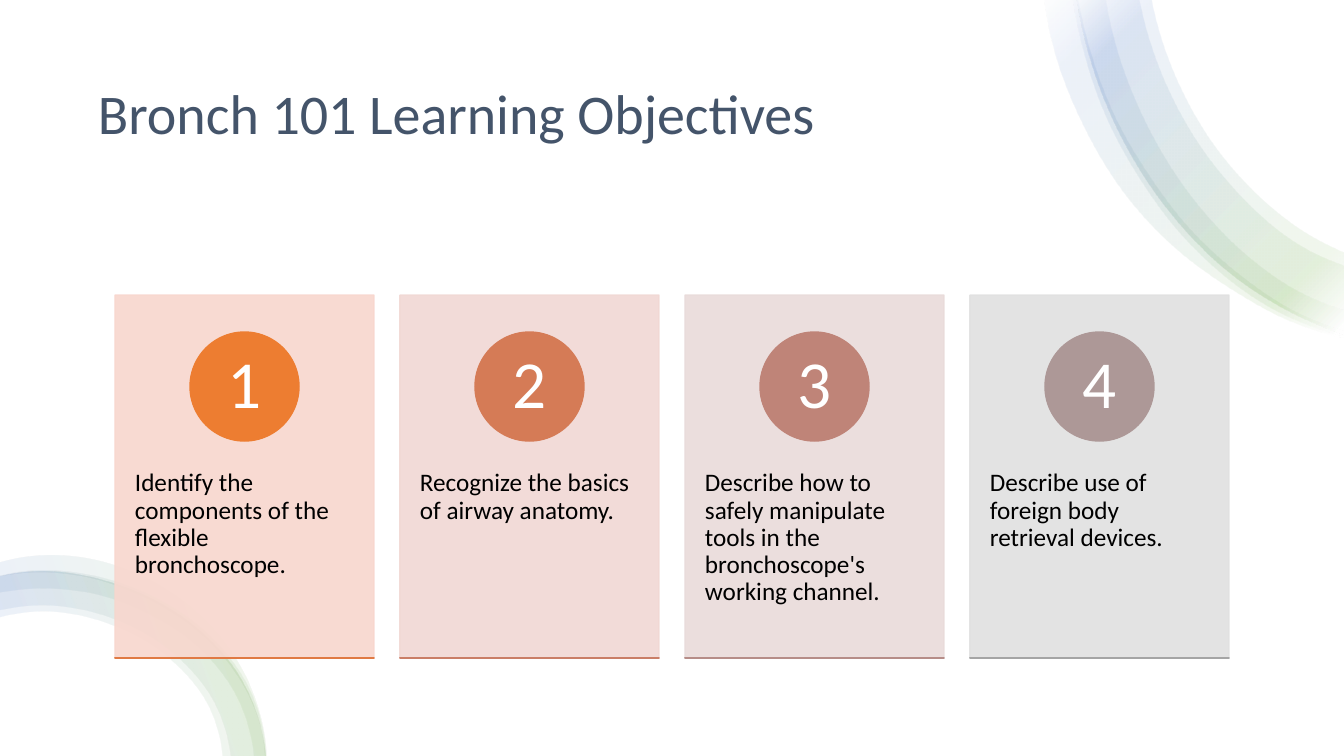
from math import dist

from lxml import etree
from pptx import Presentation
from pptx.dml.color import RGBColor
from pptx.enum.shapes import MSO_SHAPE
from pptx.enum.text import MSO_ANCHOR, PP_ALIGN
from pptx.oxml.ns import qn
from pptx.util import Pt

EMU_PER_PX = 12192000 / 1344
SLIDE_WIDTH, SLIDE_HEIGHT = 1344, 756
RECTANGLE, OVAL = MSO_SHAPE.RECTANGLE, MSO_SHAPE.OVAL
TOP, MIDDLE = MSO_ANCHOR.TOP, MSO_ANCHOR.MIDDLE
LEFT, CENTER = PP_ALIGN.LEFT, PP_ALIGN.CENTER

FONT = "Calibri"
WHITE = RGBColor(0xFF, 0xFF, 0xFF)
BLACK = RGBColor(0x00, 0x00, 0x00)
SLATE = RGBColor(0x44, 0x54, 0x6A)
GREEN = RGBColor(0x70, 0xAD, 0x47)
BLUE = RGBColor(0x44, 0x72, 0xC4)
SWOOSH_STOPS = [(2, WHITE), (16, GREEN), (85, BLUE), (100, WHITE)]
SWOOSH_OPACITY = 10
CARD_OPACITY = 90

# Objective, card colour, circle colour, base line colour
OBJECTIVES = [
    ("Identify the components of the flexible bronchoscope.",
     RGBColor(0xF8, 0xD7, 0xCE), RGBColor(0xED, 0x7D, 0x31), RGBColor(0xE0, 0x7A, 0x44)),
    ("Recognize the basics of airway anatomy.",
     RGBColor(0xF1, 0xD8, 0xD4), RGBColor(0xD5, 0x7B, 0x56), RGBColor(0xCA, 0x7E, 0x67)),
    ("Describe how to safely manipulate tools in the bronchoscope's working channel.",
     RGBColor(0xE9, 0xDB, 0xDA), RGBColor(0xBF, 0x84, 0x78), RGBColor(0xB6, 0x8D, 0x88)),
    ("Describe use of foreign body retrieval devices.",
     RGBColor(0xE1, 0xE1, 0xE1), RGBColor(0xAD, 0x98, 0x97), RGBColor(0xA5, 0xA5, 0xA5)),
]
CARD_LEFT, CARD_TOP, CARD_STEP = 115, 295, 285
CARD_WIDTH, CARD_HEIGHT = 259, 363
CIRCLE_SIZE, NUMBER_SIZE = 109, 77

# Each band is an outer edge and an inner edge, as points on smooth curves
CORNER_OUTER = [(1344, 335), (1233, 276), (1161, 201), (1108, 108), (1076, -9)]
CORNER_BANDS = [
    ([(1344, 338), (1292, 322), (1231, 289), (1174, 247), (1125, 194),
      (1087, 132), (1049, 26), (1044, -9)],
     [(1077, -9), (1091, 52), (1115, 116), (1149, 175), (1190, 229),
      (1240, 275), (1296, 312), (1344, 331)]),
    (CORNER_OUTER, [(1150, -9), (1167, 55), (1229, 165), (1317, 240), (1344, 253)]),
    ([(1344, 336), (1289, 317), (1182, 235), (1141, 180), (1108, 120),
      (1077, 20), (1072, -9)],
     [(1105, -9), (1116, 44), (1138, 105), (1205, 213), (1249, 257),
      (1300, 292), (1344, 310)]),
    (CORNER_OUTER, [(1138, -9), (1156, 59), (1220, 173), (1311, 252), (1344, 266)]),
]
LOWER_OUTER = [(265, 756), (238, 675), (187, 621), (117, 585), (40, 572), (0, 577)]
LOWER_BANDS = [
    (LOWER_OUTER,
     [(0, 618), (40, 612), (108, 624), (167, 657), (208, 706), (222, 756)]),
    (LOWER_OUTER,
     [(0, 611), (40, 606), (110, 618), (171, 652), (214, 703), (230, 756)]),
    ([(265, 756), (249, 690), (205, 632), (143, 592), (70, 572), (31, 571), (0, 576)],
     [(0, 593), (33, 589), (68, 590), (102, 596), (135, 608), (194, 644),
      (236, 697), (253, 756)]),
    ([(266, 756), (252, 692), (212, 628), (149, 580), (72, 557), (31, 557), (0, 563)],
     [(0, 577), (32, 573), (70, 575), (106, 583), (140, 596), (202, 636),
      (238, 678), (260, 728), (264, 756)]),
]


def px(length):
    return round(length * EMU_PER_PX)


def set_opacity(color_element, percent):
    etree.SubElement(color_element, qn("a:alpha")).set("val", str(percent * 1000))


def curve_controls(points):
    """Return the two Bezier control points of each step of a smooth curve."""
    lengths = [dist(a, b) for a, b in zip(points, points[1:])]
    slopes = [((b[0] - a[0]) / h, (b[1] - a[1]) / h)
              for a, b, h in zip(points, points[1:], lengths)]
    tangents = [tuple((s * h1 + t * h0) / (h0 + h1) for s, t in zip(s0, s1))
                for s0, s1, h0, h1 in zip(slopes, slopes[1:], lengths, lengths[1:])]
    first = tuple(2 * s - t for s, t in zip(slopes[0], tangents[0]))
    last = tuple(2 * s - t for s, t in zip(slopes[-1], tangents[-1]))
    tangents = [first, *tangents, last]
    return [((a[0] + m[0] * h / 3, a[1] + m[1] * h / 3),
             (b[0] - n[0] * h / 3, b[1] - n[1] * h / 3))
            for a, b, m, n, h in zip(points, points[1:], tangents, tangents[1:], lengths)]


def bend_lines(shape, outer, inner):
    """Turn the straight steps along both edges into Bezier curves."""
    steps = curve_controls(outer) + [None] + curve_controls(inner)
    lines = list(shape._element.iter(qn("a:lnTo")))
    for line, controls in zip(lines, steps):
        if controls is None:
            continue
        line.tag = qn("a:cubicBezTo")
        for index, (x, y) in enumerate(controls):
            point = etree.Element(qn("a:pt"), x=str(px(x) - shape.left), y=str(px(y) - shape.top))
            line.insert(index, point)


def fill_gradient(shape, angle):
    """Fill with the see-through swoosh gradient, at a clockwise angle."""
    shape.fill.background()
    no_fill = shape._element.spPr.find(qn("a:noFill"))
    gradient = etree.Element(qn("a:gradFill"))
    stops = etree.SubElement(gradient, qn("a:gsLst"))
    for position, color in SWOOSH_STOPS:
        stop = etree.SubElement(stops, qn("a:gs"), pos=str(position * 1000))
        color_element = etree.SubElement(stop, qn("a:srgbClr"), val=str(color))
        set_opacity(color_element, SWOOSH_OPACITY)
    etree.SubElement(gradient, qn("a:lin"), ang=str(angle * 60000), scaled="0")
    no_fill.getparent().replace(no_fill, gradient)


def add_swoosh(slide, bands, angle):
    for outer, inner in bands:
        outline = [(px(x), px(y)) for x, y in outer + inner]
        builder = slide.shapes.build_freeform(*outline[0])
        builder.add_line_segments(outline[1:], close=True)
        shape = builder.convert_to_shape()
        shape.shadow.inherit = False
        shape.line.fill.background()
        bend_lines(shape, outer, inner)
        fill_gradient(shape, angle)


def add_shape(slide, kind, left, top, width, height, fill=None, line=None):
    shape = slide.shapes.add_shape(kind, px(left), px(top), px(width), px(height))
    shape.shadow.inherit = False
    if fill is None:
        shape.fill.background()
    else:
        shape.fill.solid()
        shape.fill.fore_color.rgb = fill
    if line is None:
        shape.line.fill.background()
    else:
        shape.line.color.rgb = line
        shape.line.width = Pt(1)
    return shape


def add_text(slide, left, top, width, height, text, size, color,
             alignment=LEFT, anchor=MIDDLE, insets=(10, 5)):
    frame = add_shape(slide, RECTANGLE, left, top, width, height).text_frame
    frame.word_wrap = True
    frame.vertical_anchor = anchor
    frame.margin_left = frame.margin_right = px(insets[0])
    frame.margin_top = frame.margin_bottom = px(insets[1])
    paragraph = frame.paragraphs[0]
    paragraph.text = text
    paragraph.alignment = alignment
    paragraph.line_spacing = 0.9
    paragraph.font.name = FONT
    paragraph.font.size = Pt(size)
    paragraph.font.color.rgb = color


def add_objective_card(slide, number, objective, card_color, circle_color, line_color):
    left = CARD_LEFT + (number - 1) * CARD_STEP
    card = add_shape(slide, RECTANGLE, left, CARD_TOP, CARD_WIDTH, CARD_HEIGHT,
                     card_color, card_color)
    for color_element in card._element.spPr.iter(qn("a:srgbClr")):
        set_opacity(color_element, CARD_OPACITY)
    add_text(slide, left, CARD_TOP + 139, CARD_WIDTH, 218, objective, 18, BLACK,
             anchor=TOP, insets=(20, 36))
    add_shape(slide, OVAL, left + (CARD_WIDTH - CIRCLE_SIZE) // 2, CARD_TOP + 37,
              CIRCLE_SIZE, CIRCLE_SIZE, circle_color, circle_color)
    add_text(slide, left + (CARD_WIDTH - NUMBER_SIZE) // 2, CARD_TOP + 53,
             NUMBER_SIZE, NUMBER_SIZE, str(number), 48, WHITE,
             alignment=CENTER, insets=(8, 1))
    add_shape(slide, RECTANGLE, left, CARD_TOP + CARD_HEIGHT, CARD_WIDTH, 0,
              line_color, line_color)


def main():
    presentation = Presentation()
    presentation.slide_width, presentation.slide_height = px(SLIDE_WIDTH), px(SLIDE_HEIGHT)
    slide = presentation.slides.add_slide(presentation.slide_layouts[6])
    add_shape(slide, RECTANGLE, 0, 0, SLIDE_WIDTH, SLIDE_HEIGHT, WHITE)
    add_text(slide, 88, 51, 1166, 131, "Bronch 101 Learning Objectives", 40, SLATE)
    add_swoosh(slide, CORNER_BANDS, 225)
    add_swoosh(slide, LOWER_BANDS, 160)
    for number, objective in enumerate(OBJECTIVES, start=1):
        add_objective_card(slide, number, *objective)
    presentation.save("out.pptx")


if __name__ == "__main__":
    main()
